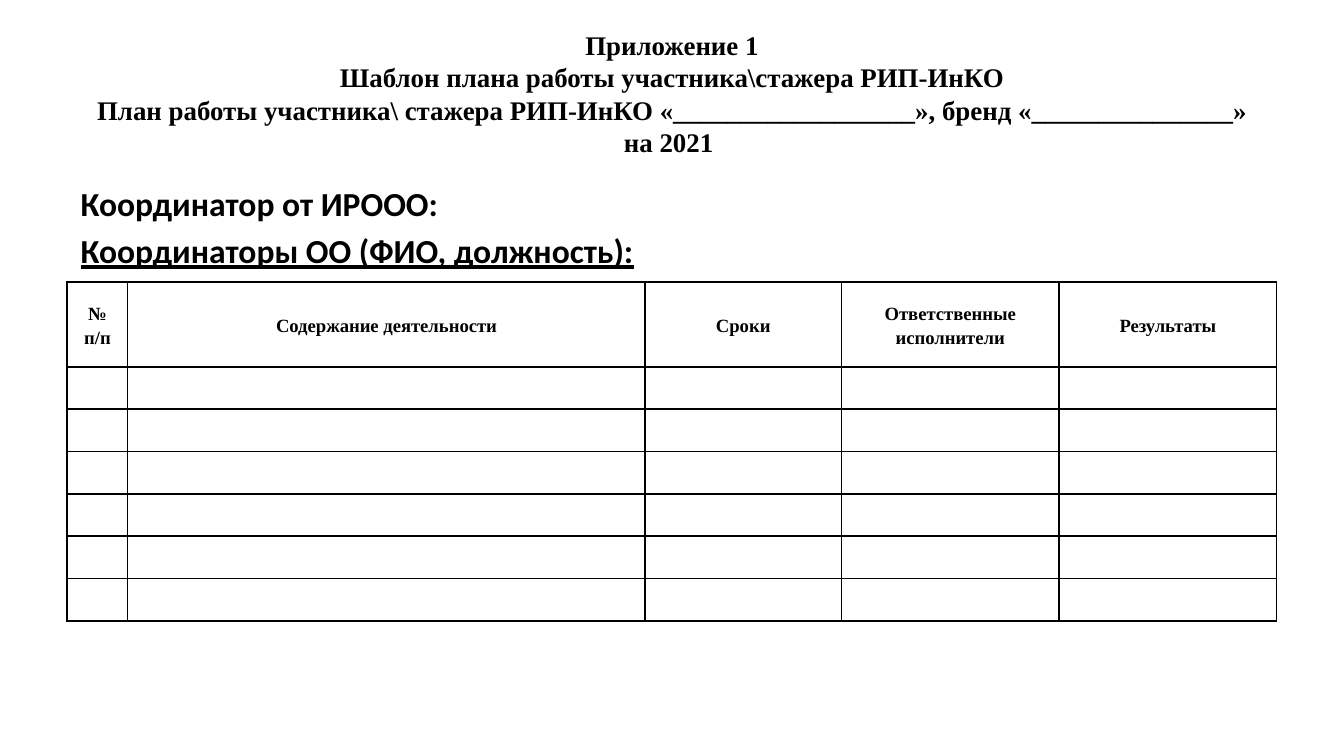
from typing import NamedTuple

from lxml import etree
from pptx import Presentation
from pptx.dml.color import RGBColor
from pptx.enum.text import MSO_ANCHOR, MSO_AUTO_SIZE, PP_ALIGN
from pptx.oxml.ns import qn
from pptx.util import Inches, Pt

MIDDLE, TOP = MSO_ANCHOR.MIDDLE, MSO_ANCHOR.TOP
CENTER, LEFT = PP_ALIGN.CENTER, PP_ALIGN.LEFT
NO_AUTOFIT = MSO_AUTO_SIZE.NONE
BLACK, WHITE = "000000", "FFFFFF"
SERIF, SANS = "Times New Roman", "Calibri"


class Column(NamedTuple):
    heading: str
    width: float


class Box(NamedTuple):
    left: float
    top: float
    width: float
    height: float


COLUMNS = [
    Column("№ п/п", 0.45),
    Column("Содержание деятельности", 3.85),
    Column("Сроки", 1.46),
    Column("Ответственные исполнители", 1.62),
    Column("Результаты", 1.62),
]
EMPTY_ROWS = 6
HEADER_HEIGHT = 0.63
ROW_HEIGHT = HEADER_HEIGHT / 2

TITLE_LINES = [
    "Приложение 1",
    "Шаблон плана работы участника\\стажера РИП-ИнКО",
    f"План работы участника\\ стажера РИП-ИнКО «{'_' * 18}», бренд «{'_' * 15}» на 2021 ",
]
COORDINATORS = ["Координатор от ИРООО:", "Координаторы ОО (ФИО, должность):"]


def color(value: str) -> RGBColor:
    return RGBColor.from_string(value)


def style(paragraph, font_name: str, size: float, align) -> None:
    paragraph.alignment = align
    font = paragraph.font
    font.name, font.size, font.bold = font_name, Pt(size), True
    font.color.rgb = color(BLACK)


def place(placeholder, box: Box, anchor):
    """Move a placeholder and return its text frame."""
    placeholder.left, placeholder.top = Inches(box.left), Inches(box.top)
    placeholder.width, placeholder.height = Inches(box.width), Inches(box.height)
    frame = placeholder.text_frame
    frame.word_wrap = True
    frame.auto_size = NO_AUTOFIT
    frame.vertical_anchor = anchor
    return frame


def remove_bullet(paragraph) -> None:
    properties = paragraph._p.get_or_add_pPr()
    properties.set("marL", "0")
    properties.set("indent", "0")
    properties.insert_element_before(
        properties.makeelement(qn("a:buNone")), "a:tabLst", "a:defRPr", "a:extLst"
    )


def format_cell(cell) -> None:
    """White cell with a thin black border and narrow margins."""
    cell.margin_left = cell.margin_right = Inches(0.06)
    cell.margin_top = cell.margin_bottom = 0
    cell.vertical_anchor = MIDDLE
    properties = cell._tc.get_or_add_tcPr()
    for side in ("a:lnL", "a:lnR", "a:lnT", "a:lnB"):
        line = etree.SubElement(properties, qn(side), w=str(Pt(1)))
        fill = etree.SubElement(line, qn("a:solidFill"))
        etree.SubElement(fill, qn("a:srgbClr"), val=BLACK)
    cell.fill.solid()
    cell.fill.fore_color.rgb = color(WHITE)
    paragraph = cell.text_frame.paragraphs[0]
    paragraph.line_spacing = 1.15
    style(paragraph, SERIF, 10, CENTER)


def add_plan_table(slide, box: Box) -> None:
    table = slide.shapes.add_table(
        EMPTY_ROWS + 1, len(COLUMNS), *(Inches(length) for length in box)
    ).table
    for row in table.rows:
        row.height = Inches(ROW_HEIGHT)
    table.rows[0].height = Inches(HEADER_HEIGHT)
    for index, column in enumerate(COLUMNS):
        table.columns[index].width = Inches(column.width)
        table.cell(0, index).text = column.heading
    for cell in table.iter_cells():
        format_cell(cell)


def main() -> None:
    # Widescreen 16:9 slide
    presentation = Presentation()
    presentation.slide_width = Inches(10)
    presentation.slide_height = Inches(10 * 9 / 16)
    slide = presentation.slides.add_slide(presentation.slide_layouts[1])

    # Title: vertical tabs become line breaks
    heading = place(slide.shapes.title, Box(0.5, 0.23, 9, 0.93), MIDDLE)
    heading.text = "\v".join(TITLE_LINES)
    style(heading.paragraphs[0], SERIF, 14.4, CENTER)

    # Coordinators
    coordinators = place(slide.placeholders[1], Box(0.5, 1.31, 9, 3.71), TOP)
    coordinators.text = "\n".join(COORDINATORS)
    for paragraph in coordinators.paragraphs:
        style(paragraph, SANS, 18, LEFT)
        remove_bullet(paragraph)
    coordinators.paragraphs[-1].font.underline = True

    # Work plan
    add_plan_table(slide, Box(0.5, 2.1, 9, HEADER_HEIGHT + EMPTY_ROWS * ROW_HEIGHT))

    presentation.save("out.pptx")


if __name__ == "__main__":
    main()
